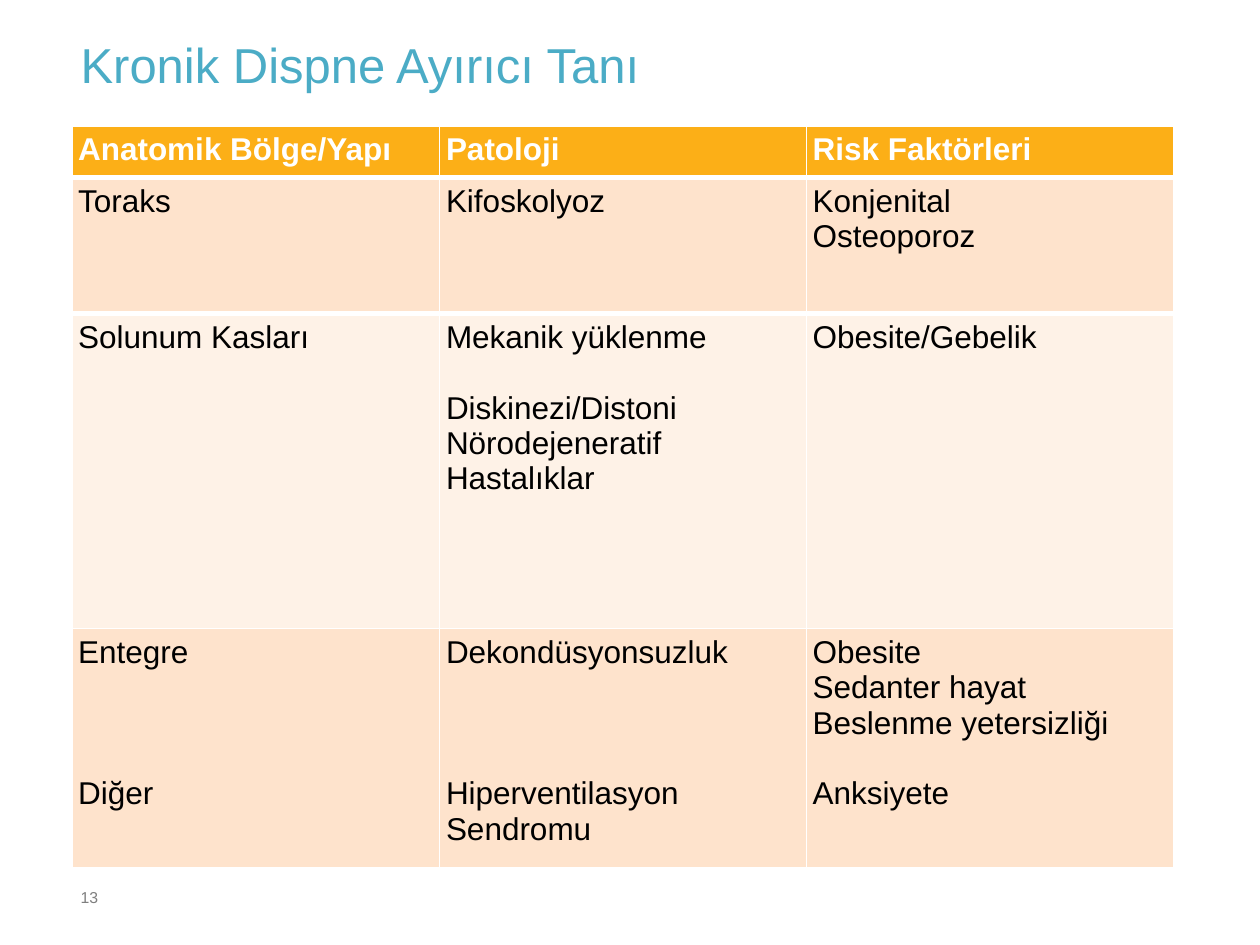
from pptx import Presentation
from pptx.dml.color import RGBColor
from pptx.enum.text import MSO_ANCHOR
from pptx.oxml import parse_xml
from pptx.oxml.ns import nsdecls
from pptx.util import Inches, Pt

WIDE, HIGH = 10, 7.5
HUES = {
    "title": "4BACC6", "head": "FCAF17", "dark": "FEE3CC", "light": "FEF2E7",
    "white": "FFFFFF", "black": "000000", "gray": "7F7F7F",
}
COLS = [2.92, 2.91, 2.92]
ROWS = [
    (0.41, "head", ["Anatomik Bölge/Yapı", "Patoloji", "Risk Faktörleri"]),
    (1.08, "dark", ["Toraks", "Kifoskolyoz", "Konjenital\nOsteoporoz"]),
    (2.5, "light", [
        "Solunum Kasları",
        [("Mekanik yüklenme", 0), ("Diskinezi/Distoni", 1),
         ("Nörodejeneratif Hastalıklar", 0)],
        "Obesite/Gebelik",
    ]),
    (1.9, "dark", [
        [("Entegre", 0), ("Diğer", 3)],
        [("Dekondüsyonsuzluk", 0), ("Hiperventilasyon Sendromu", 3)],
        [("Obesite", 0), ("Sedanter hayat", 0),
         ("Beslenme yetersizliği", 0), ("Anksiyete", 1)],
    ]),
]
THICK = [1, 3, 3, 1, 1]


class Deck:
    face = "Arial"
    pad = Inches(0.05)
    line = Pt(20.2)

    def __init__(self):
        self.file = Presentation()
        self.file.slide_width = Inches(WIDE)
        self.file.slide_height = Inches(HIGH)
        self.slide = self.file.slides.add_slide(self.file.slide_layouts[6])

    def place(self, left, top, width, height):
        wide, high = self.file.slide_width, self.file.slide_height
        return (round(left * wide), round(top * high),
                round(width * wide), round(height * high))

    def inset(self, box):
        box.margin_left = box.margin_right = self.pad
        box.margin_top = box.margin_bottom = self.pad

    def style(self, para, size, hue, bold=False):
        font = para.font
        font.name, font.size, font.bold = self.face, Pt(size), bold
        font.color.rgb = RGBColor.from_string(HUES[hue])

    def text(self, words, area, size, hue, wrap=True, lead=None):
        frame = self.slide.shapes.add_textbox(*self.place(*area)).text_frame
        frame.word_wrap = wrap
        frame.vertical_anchor = MSO_ANCHOR.TOP
        self.inset(frame)
        para = frame.paragraphs[0]
        para.text = words
        para.line_spacing = lead
        self.style(para, size, hue)

    def edge(self, cell, side, width):
        cell._tc.get_or_add_tcPr().append(parse_xml(
            f'<a:ln{side} {nsdecls("a")} w="{Pt(width)}"><a:solidFill>'
            f'<a:srgbClr val="{HUES["white"]}"/></a:solidFill></a:ln{side}>'))

    def cell(self, cell, words, fill, above, below):
        head = fill == "head"
        self.inset(cell)
        cell.vertical_anchor = MSO_ANCHOR.TOP
        for side, width in zip("LRTB", (1, 1, above, below)):
            self.edge(cell, side, width)
        cell.fill.solid()
        cell.fill.fore_color.rgb = RGBColor.from_string(HUES[fill])
        lines = [(words, 0)] if isinstance(words, str) else words
        frame = cell.text_frame
        for spot, (line, gap) in enumerate(lines):
            para = frame.add_paragraph() if spot else frame.paragraphs[0]
            para.text = line
            if gap:
                para.space_before = gap * self.line
            self.style(para, 18, "white" if head else "black", head)

    def table(self, area, cols, rows):
        grid = self.slide.shapes.add_table(
            len(rows), len(cols), *self.place(*area)).table
        for col, width in zip(grid.columns, cols):
            col.width = Inches(width)
        for r, (height, fill, cells) in enumerate(rows):
            grid.rows[r].height = Inches(height)
            for c, words in enumerate(cells):
                self.cell(grid.cell(r, c), words, fill, THICK[r], THICK[r + 1])


def main():
    deck = Deck()
    deck.text("Kronik Dispne Ayırıcı Tanı", (0.059, 0.045, 0.91, 0.12),
              28, "title", lead=0.75)
    deck.table((0.057, 1 / HIGH, 0.875, 5.89 / HIGH), COLS, ROWS)
    deck.text("13", (0.059, 7 / HIGH, 0.025, 0.03), 9, "gray", wrap=False)
    deck.file.save("out.pptx")


if __name__ == "__main__":
    main()
